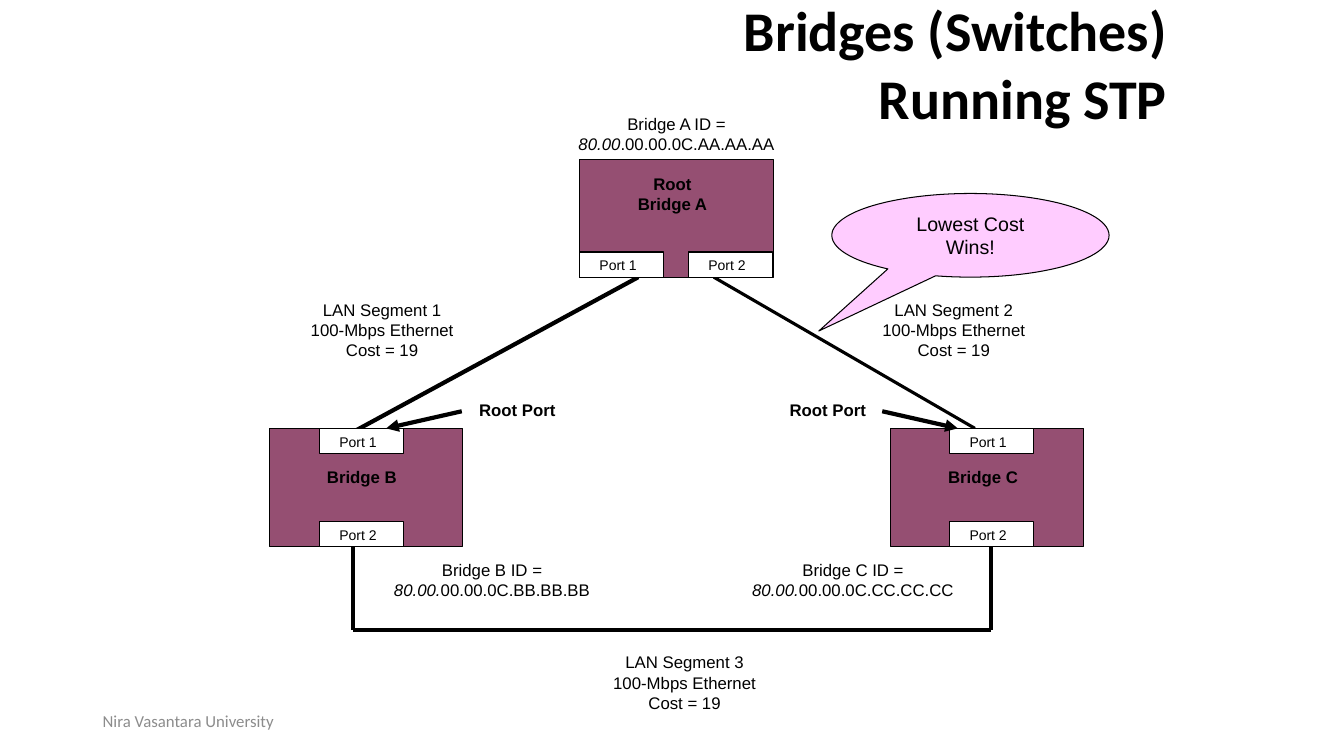
import pptx
import pptx.util
import pptx.dml.color
import pptx.enum.shapes
import pptx.enum.text
import pptx.oxml
import pptx.oxml.ns

Inches = pptx.util.Inches
Pt = pptx.util.Pt
RGBColor = pptx.dml.color.RGBColor
Shape = pptx.enum.shapes.MSO_SHAPE
Align = pptx.enum.text.PP_ALIGN
Anchor = pptx.enum.text.MSO_ANCHOR

BLACK = RGBColor(0, 0, 0)
WHITE = RGBColor(255, 255, 255)
PLUM = RGBColor(0x95, 0x4F, 0x72)
PINK = RGBColor(0xFF, 0xCC, 0xFF)
GRAY = RGBColor(0x8C, 0x8C, 0x8C)

BOX_W, BOX_H = 1.92, 1.17
PORT_W, PORT_H = 0.83, 0.25


def style(frame, size, bold=False, font="Arial", color=BLACK, align=Align.CENTER):
    for para in frame.paragraphs:
        para.alignment = align
        for run in para.runs:
            run.font.size = Pt(size)
            run.font.bold = bold
            run.font.name = font
            run.font.color.rgb = color


def add_text(slide, text, left, top, width, height, size=12,
             anchor=Anchor.TOP, **look):
    box = slide.shapes.add_textbox(
        Inches(left), Inches(top), Inches(width), Inches(height))
    frame = box.text_frame
    frame.word_wrap = True
    frame.vertical_anchor = anchor
    frame.text = text
    style(frame, size, **look)
    return frame


def add_block(slide, kind, left, top, width, height, fill):
    block = slide.shapes.add_shape(
        kind, Inches(left), Inches(top), Inches(width), Inches(height))
    block.shadow.inherit = False
    block.fill.solid()
    block.fill.fore_color.rgb = fill
    block.line.color.rgb = BLACK
    block.line.width = Pt(0.75)
    return block


def add_line(slide, start, end, width=3, arrow=False):
    line = slide.shapes.add_connector(
        pptx.enum.shapes.MSO_CONNECTOR.STRAIGHT,
        Inches(start[0]), Inches(start[1]), Inches(end[0]), Inches(end[1]))
    line.line.color.rgb = BLACK
    line.line.width = Pt(width)
    props = line._element.spPr
    if arrow:
        tail = pptx.oxml.parse_xml(
            '<a:tailEnd %s type="triangle"/>' % pptx.oxml.ns.nsdecls("a"))
        line.line._get_or_add_ln().append(tail)
    props.append(pptx.oxml.parse_xml(
        "<a:effectLst %s/>" % pptx.oxml.ns.nsdecls("a")))


def add_bridge(slide, name, left, top, label_top, ports):
    add_block(slide, Shape.RECTANGLE, left, top, BOX_W, BOX_H, PLUM)
    add_text(slide, name, left - 0.08, label_top, 2, 0.3, bold=True)
    for number, (x, y) in enumerate(ports, 1):
        add_block(slide, Shape.RECTANGLE, x, y, PORT_W, PORT_H, WHITE)
        add_text(slide, f"Port {number}", x - 0.08, y, 0.92, 0.27, size=10)


def add_id(slide, name, lead, rest, left, top):
    frame = add_text(slide, f"Bridge {name} ID = ", left, top, 2.92, 0.71)
    para = frame.paragraphs[0]
    for text, slant in ((lead, True), (rest, False)):
        run = para.add_run()
        run.text = text
        run.font.italic = slant
    style(frame, 12)


def add_callout(slide, text):
    bubble = add_block(slide, Shape.OVAL_CALLOUT, 8.25, 1.92, 2.75, 0.83, PINK)
    bubble.adjustments[0] = -0.547
    bubble.adjustments[1] = 1.144
    frame = bubble.text_frame
    frame.word_wrap = False
    frame.vertical_anchor = Anchor.MIDDLE
    frame.text = text
    style(frame, 14)


def main():
    deck = pptx.Presentation()
    deck.slide_width, deck.slide_height = Inches(13.33), Inches(7.5)
    slide = deck.slides.add_slide(deck.slide_layouts[6])

    # LAN segments
    add_line(slide, (6.33, 2.75), (3.42, 4.33))
    add_line(slide, (7.08, 2.75), (9.67, 4.25), width=2.25)
    add_line(slide, (9.83, 6.25), (3.5, 6.25))
    for x in (3.5, 9.83):
        add_line(slide, (x, 5.42), (x, 6.25))

    # Bridges with their ports
    add_bridge(slide, "Root\nBridge A", 5.75, 1.58, 1.67,
               [(5.75, 2.5), (6.83, 2.5)])
    for name, left, port in (("B", 2.67, 3.17), ("C", 8.83, 9.42)):
        add_bridge(slide, f"Bridge {name}", left, 4.25, 4.58,
                   [(port, 4.25), (port, 5.17)])

    # Bridge IDs
    add_id(slide, "A", "80.00", ".00.00.0C.AA.AA.AA", 5.25, 1.08)
    add_id(slide, "B", "80.00.", "00.00.0C.BB.BB.BB", 3.42, 5.5)
    add_id(slide, "C", "80.00.", "00.00.0C.CC.CC.CC", 7, 5.5)

    # Root ports
    for left, start, end in ((3.67, 4.58, 3.83), (6.75, 8.75, 9.5)):
        add_text(slide, "Root Port", left, 3.92, 2.92, 0.3, bold=True)
        add_line(slide, (start, 4.08), (end, 4.25), arrow=True)

    # Callout and segment labels
    add_callout(slide, "Lowest Cost\nWins!")
    for number, (x, y) in enumerate(((2.33, 2.92), (8, 2.92), (5.33, 6.42)), 1):
        add_text(slide, f"LAN Segment {number}\n100-Mbps Ethernet\nCost = 19",
                 x, y, 2.92, 0.71)

    # Footer and title
    add_text(slide, "Nira Vasantara University", 0.92, 6.95, 3, 0.4,
             anchor=Anchor.MIDDLE, font="Calibri", color=GRAY, align=Align.LEFT)
    add_text(slide, "Bridges (Switches) Running STP", 5.5, 0, 6.17, 1.25, size=40,
             anchor=Anchor.MIDDLE, bold=True, font="Calibri", align=Align.RIGHT)

    deck.save("out.pptx")


if __name__ == "__main__":
    main()
